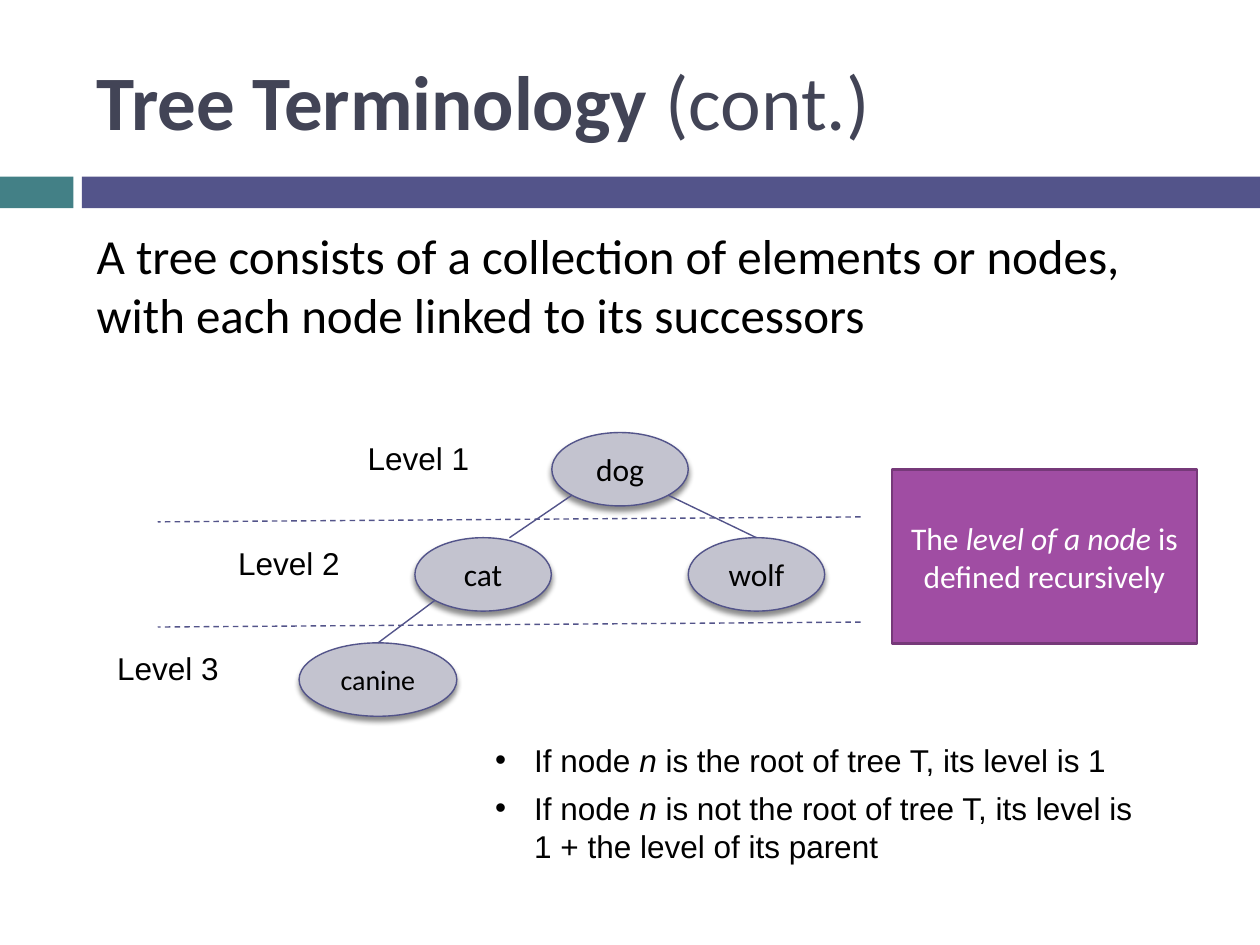
import math
from lxml import etree
from pptx import Presentation
from pptx.dml.color import RGBColor
from pptx.enum import dml, shapes, text
from pptx.oxml import ns
from pptx.util import Cm, Pt

# Content: text is a list of paragraphs, each a list of (words, format) runs
BOLD, ITALIC = {"bold": True}, {"italic": True}
TITLE = [[("Tree Terminology ", BOLD), ("(cont.)", {})]]
INTRO = [[("A tree consists of a collection of elements or nodes, "
           "with each node linked to its successors", {})]]
CALLOUT = [[("The ", {}), ("level of a node", ITALIC), (" is defined recursively", {})]]
RULES = [
    [("If node ", {}), ("n", ITALIC), (" is the root of tree T, its level is 1", {})],
    [("If node ", {}), ("n", ITALIC),
     (" is not the root of tree T, its level is \n1 + the level of its parent", {})],
]
# name: (level, centre x, width, text size)
NODES = {"dog": (1, 12.5, 2.75, 18), "cat": (2, 9.74, 2.75, 18),
         "wolf": (2, 15.25, 2.75, 18), "canine": (3, 7.62, 3.18, 16)}
# parent, child, side of the parent, shift from the child's top centre
LINKS = [("dog", "cat", -1, 0.53), ("dog", "wolf", 1, 0), ("cat", "canine", -1, 0)]
LEVEL_LABELS = {1: 7.16, 2: 4.55, 3: 2.11}   # level: left edge
BANDS = [(0, 1.48, "438086"), (1.65, 23.75, "53548A")]
TOP, LEVEL_STEP, NODE_H = 8.72, 2.12, 1.48
INDIGO = "53548A"


def rgb(value):
    return RGBColor.from_string(value)


def level_top(level):
    return TOP + (level - 1) * LEVEL_STEP


def write(sp, paragraphs, size, color="000000", font="Calibri", align="LEFT",
          anchor="TOP", wrap=True):
    tf = sp.text_frame
    tf.word_wrap = wrap
    tf.auto_size = text.MSO_AUTO_SIZE.NONE
    tf.vertical_anchor = getattr(text.MSO_ANCHOR, anchor)
    for i, runs in enumerate(paragraphs):
        p = tf.paragraphs[0] if i == 0 else tf.add_paragraph()
        p.alignment = getattr(text.PP_ALIGN, align)
        for words, style in runs:
            for j, line in enumerate(words.split("\n")):
                if j:
                    p.add_line_break()
                r = p.add_run()
                r.text = line
                for key, value in {"name": font, "size": Pt(size), **style}.items():
                    setattr(r.font, key, value)
                r.font.color.rgb = rgb(color)
    return tf


def add_text(box, paragraphs, size, **style):
    return write(s.shapes.add_textbox(*map(Cm, box)), paragraphs, size, **style)


def add_shape(kind, box, fill, line=None, width=0.79):
    sp = s.shapes.add_shape(kind, *map(Cm, box))
    sp.shadow.inherit = False
    sp.fill.solid()
    sp.fill.fore_color.rgb = rgb(fill)
    if line:
        sp.line.color.rgb = rgb(line)
        sp.line.width = Pt(width)
    else:
        sp.line.fill.background()
    return sp


def add_shadow(sp):
    effects = sp._element.spPr.find(ns.qn("a:effectLst"))
    shadow = etree.SubElement(effects, ns.qn("a:outerShdw"), blurRad=str(Pt(3)),
                              dist=str(Pt(2.4)), dir="5400000", rotWithShape="0")
    black = etree.SubElement(shadow, ns.qn("a:srgbClr"), val="000000")
    etree.SubElement(black, ns.qn("a:alpha"), val="45000")


def add_line(x1, y1, x2, y2, dashed=False):
    c = s.shapes.add_connector(shapes.MSO_CONNECTOR.STRAIGHT, *map(Cm, (x1, y1, x2, y2)))
    c.line.color.rgb = rgb(INDIGO)
    c.line.width = Pt(0.79)
    if dashed:
        c.line.dash_style = dml.MSO_LINE.DASH
    etree.SubElement(c._element.spPr, ns.qn("a:effectLst"))


prs = Presentation()
prs.slide_width, prs.slide_height = Cm(25.4), Cm(19.05)
s = prs.slides.add_slide(prs.slide_layouts[5])
RECT, OVAL = shapes.MSO_SHAPE.RECTANGLE, shapes.MSO_SHAPE.OVAL

# Title and bands
title = s.shapes.title
title.left, title.top, title.width, title.height = map(Cm, (1.7, 0.64, 22.66, 2.74))
write(title, TITLE, 44, color="424456", anchor="MIDDLE")
for left, width, color in BANDS:
    add_shape(RECT, (left, 3.56, width, 0.64), color)

# Tree nodes
for name, (level, cx, width, size) in NODES.items():
    node = add_shape(OVAL, (cx - width / 2, level_top(level), width, NODE_H),
                     "C3C3CF", INDIGO)
    add_shadow(node)
    write(node, [[(name, {})]], size, align="CENTER", anchor="MIDDLE", wrap=False)

# Links leave the parent at 45 degrees and reach the top of the child
for parent, child, side, shift in LINKS:
    level, cx, width, _ = NODES[parent]
    child_level, child_cx = NODES[child][:2]
    reach = math.sqrt(0.5) / 2
    add_line(cx + side * width * reach, level_top(level) + NODE_H * (0.5 + reach),
             child_cx + shift, level_top(child_level))

# Introduction and callout
add_text((1.7, 4.42, 22.02, 2.64), INTRO, 28)
callout = add_shape(RECT, (17.98, 9.47, 6.15, 3.51), "A04DA3", "763979", 1.5)
write(callout, CALLOUT, 18, color="FFFFFF", align="CENTER", anchor="MIDDLE")

# Level labels and the dashed lines between levels
for level, left in LEVEL_LABELS.items():
    add_text((left, level_top(level), 2.6, 1.02), [[(f"Level {level}", {})]], 18,
             font="Arial", wrap=False)
for level in (1, 2):
    y = level_top(level) + 1.7
    add_line(17.35, y, 3.18, y + 0.1, dashed=True)

# Bulleted rules
for p in add_text((9.73, 14.81, 13.97, 2.77), RULES, 18, font="Arial").paragraphs:
    p.space_after = Pt(6)
    pPr = p._p.get_or_add_pPr()
    pPr.set("marL", str(Cm(0.79)))
    pPr.set("indent", str(Cm(-0.79)))
    etree.SubElement(pPr, ns.qn("a:buFont"), typeface="Arial")
    etree.SubElement(pPr, ns.qn("a:buChar"), char="•")

prs.save("out.pptx")
